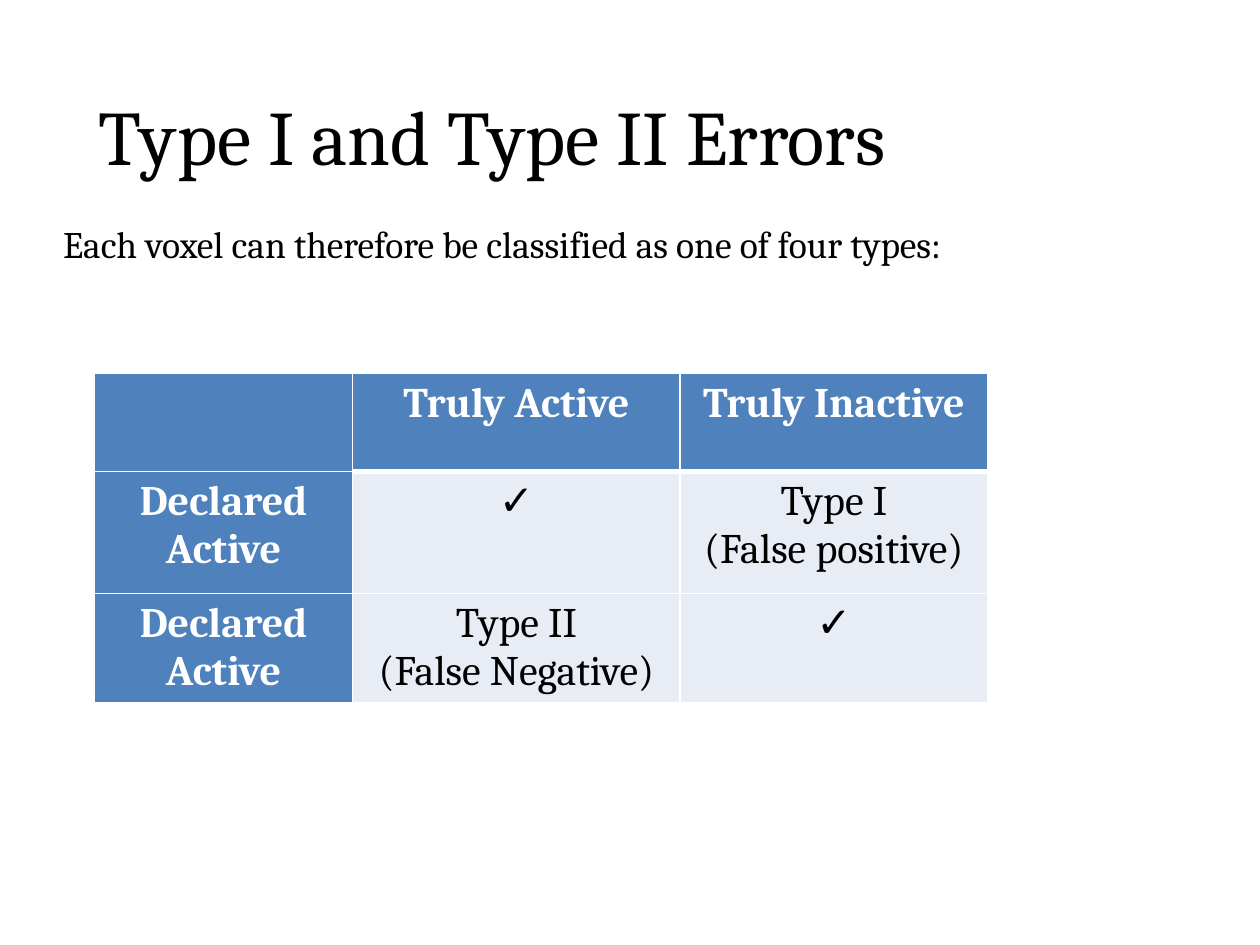
from lxml import etree
from pptx import Presentation
from pptx.dml.color import RGBColor
from pptx.enum.text import MSO_ANCHOR, MSO_AUTO_SIZE, PP_ALIGN
from pptx.oxml.ns import qn
from pptx.util import Cm, Pt

CENTER, LEFT = PP_ALIGN.CENTER, PP_ALIGN.LEFT
MIDDLE, TOP = MSO_ANCHOR.MIDDLE, MSO_ANCHOR.TOP
NO_AUTOFIT = MSO_AUTO_SIZE.NONE

COLORS = {"text": "000000", "heading": "4F81BD", "body": "E8ECF4", "light": "FFFFFF"}
MARGINS = ("margin_left", "margin_top", "margin_right", "margin_bottom")


def format_paragraph(paragraph, size, color="text", align=CENTER, bold=False, font="Cambria"):
    paragraph.alignment = align
    for attribute, value in {"size": Pt(size), "bold": bold, "name": font}.items():
        setattr(paragraph.font, attribute, value)
    paragraph.font.color.rgb = RGBColor.from_string(COLORS[color])


def add_border(cell, side, width):
    line = etree.SubElement(cell._tc.get_or_add_tcPr(), qn(f"a:ln{side}"), w=str(Pt(width)))
    fill = etree.SubElement(line, qn("a:solidFill"))
    etree.SubElement(fill, qn("a:srgbClr"), val=COLORS["light"])


prs = Presentation()
prs.slide_width, prs.slide_height = Cm(25.4), Cm(19.05)
slide = prs.slides.add_slide(prs.slide_layouts[1])
title, intro = slide.placeholders

# Title and introduction
headings = [
    (title, "Type I and Type II Errors", (-1.5, 1.12, 22.86, 3.18), MIDDLE, 44, CENTER),
    (intro, "Each voxel can therefore be classified as one of four types:",
     (1.27, 4.45, 18.82, 1.68), TOP, 21.4, LEFT),
]
for holder, words, box, anchor, size, align in headings:
    holder.left, holder.top, holder.width, holder.height = map(Cm, box)
    frame = holder.text_frame
    frame.text = words
    frame.word_wrap = True
    frame.auto_size = NO_AUTOFIT
    frame.vertical_anchor = anchor
    for margin in MARGINS:
        setattr(frame, margin, 0)
    format_paragraph(frame.paragraphs[0], size, align=align)

intro_line = intro.text_frame.paragraphs[0]
intro_line.space_before = Pt(5)
intro_properties = intro_line._p.get_or_add_pPr()
intro_properties.set("marL", "0")
intro_properties.set("indent", "0")
etree.SubElement(intro_properties, qn("a:buNone"))
# The bullet setting has to come before the default run properties
default_run = intro_properties.find(qn("a:defRPr"))
if default_run is not None:
    intro_properties.append(default_run)

# Table of declared against true activity
outcomes = [
    ["", "Truly Active", "Truly Inactive"],
    ["Declared Active", "✓", "Type I\n(False positive)"],
    ["Declared Active", "Type II\n(False Negative)", "✓"],
]
column_widths = [5.21, 6.6, 6.2]
row_heights = [1.98, 2.46, 1.4]
table = slide.shapes.add_table(
    len(row_heights), len(column_widths), Cm(1.9), Cm(7.52),
    Cm(sum(column_widths)), Cm(sum(row_heights))).table
for column, width in zip(table.columns, column_widths):
    column.width = Cm(width)
for row, height in zip(table.rows, row_heights):
    row.height = Cm(height)

for r, row in enumerate(outcomes):
    for c, words in enumerate(row):
        cell = table.cell(r, c)
        is_heading = r == 0 or c == 0
        for margin in MARGINS:
            setattr(cell, margin, Cm(0.13))
        cell.vertical_anchor = TOP
        cell.text = words
        for paragraph in cell.text_frame.paragraphs:
            format_paragraph(paragraph, 24, "light" if is_heading else "text",
                             bold=is_heading, font="Arial" if words == "✓" else "Cambria")
        top = 3 if r == 1 and c > 0 else 1
        bottom = 3 if r == 0 and c > 0 else 1
        for side, width in {"L": 1, "R": 1, "T": top, "B": bottom}.items():
            add_border(cell, side, width)
        cell.fill.solid()
        cell.fill.fore_color.rgb = RGBColor.from_string(COLORS["heading" if is_heading else "body"])

prs.save("out.pptx")
